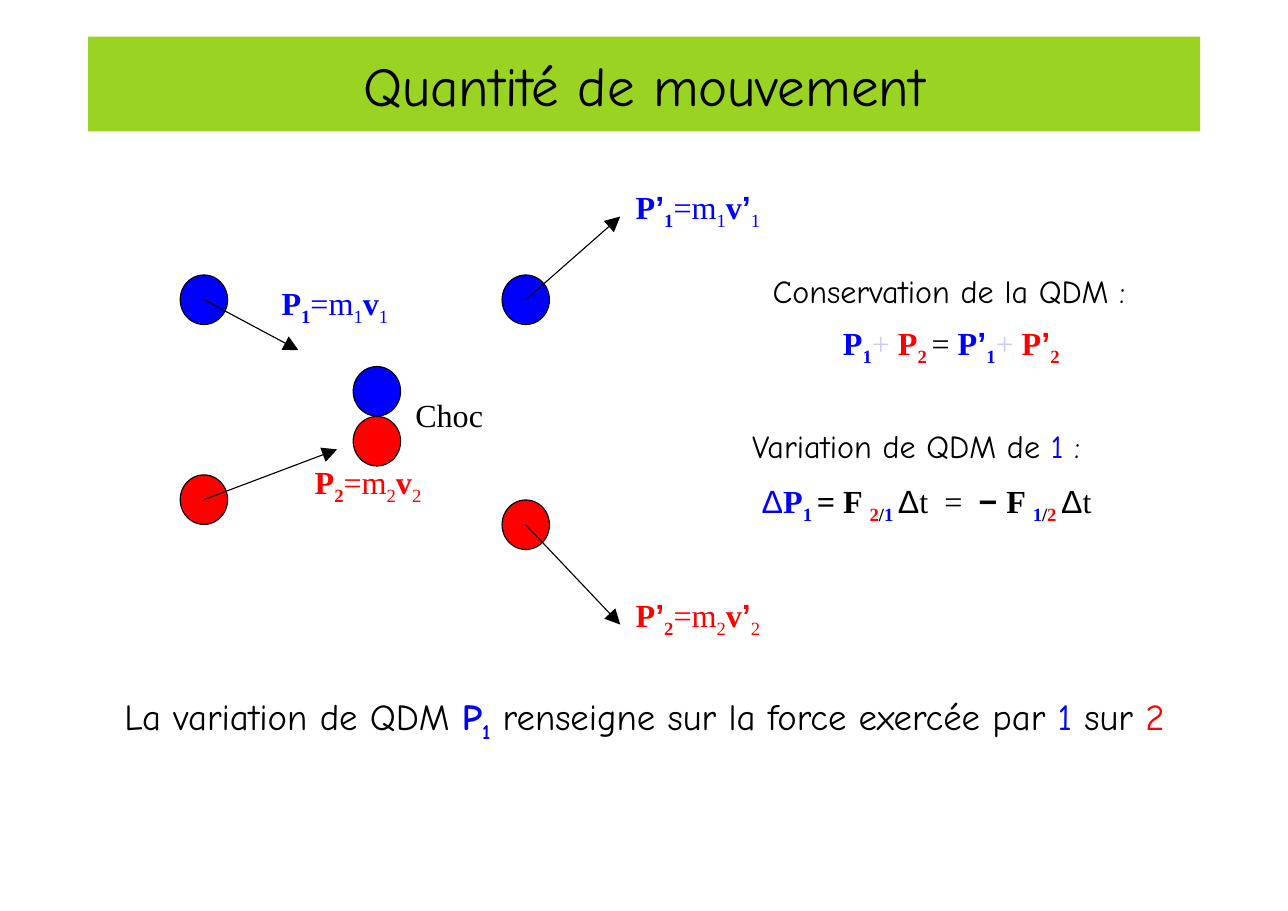
from lxml import etree
from pptx import Presentation
from pptx.dml.color import RGBColor
from pptx.enum.shapes import MSO_CONNECTOR, MSO_SHAPE
from pptx.enum.text import MSO_ANCHOR, MSO_AUTO_SIZE, PP_ALIGN
from pptx.oxml.ns import qn
from pptx.util import Inches, Pt

OVAL = MSO_SHAPE.OVAL
STRAIGHT = MSO_CONNECTOR.STRAIGHT
LEFT, CENTER = PP_ALIGN.LEFT, PP_ALIGN.CENTER
MIDDLE = MSO_ANCHOR.MIDDLE
NO_FIT, GROW = MSO_AUTO_SIZE.NONE, MSO_AUTO_SIZE.SHAPE_TO_FIT_TEXT

BLACK = RGBColor(0x00, 0x00, 0x00)
BLUE = RGBColor(0x00, 0x00, 0xFF)
RED = RGBColor(0xFF, 0x00, 0x00)
PALE = RGBColor(0xCC, 0xCC, 0xFF)
GREEN = RGBColor(0x9A, 0xD3, 0x22)

COMIC, TIMES, ARIAL = "Comic Neue", "Times New Roman", "Arial"

presentation = Presentation()
presentation.slide_width = Inches(11.69)
presentation.slide_height = Inches(8.27)
slide = presentation.slides.add_slide(presentation.slide_layouts[6])

# All places are given in percent of the slide's width and height.
COLUMN = presentation.slide_width / 100
ROW = presentation.slide_height / 100


def scale(*shares):
    """Turn alternating horizontal and vertical percentages into lengths."""
    return [int(share * (ROW if index % 2 else COLUMN))
            for index, share in enumerate(shares)]


def add_text(place, runs, font_name=TIMES, size=21, inset=6, align=LEFT):
    """Add a text box; a run is (text, colour, marks) with marks b, s (subscript), a (Arial)."""
    box = slide.shapes.add_textbox(*scale(*place))
    frame = box.text_frame
    settings = {
        "word_wrap": False, "auto_size": GROW,
        "margin_left": Pt(inset), "margin_right": Pt(inset),
        "margin_top": Pt(inset / 2), "margin_bottom": Pt(inset / 2),
    }
    for name, value in settings.items():
        setattr(frame, name, value)
    paragraph = frame.paragraphs[0]
    paragraph.alignment = align
    for text, colour, marks in runs:
        run = paragraph.add_run()
        run.text = text
        run.font.name = ARIAL if "a" in marks else font_name
        run.font.size = Pt(size)
        run.font.bold = "b" in marks
        run.font.color.rgb = colour
        if "s" in marks:
            run.font._element.set("baseline", "-25000")
    return box


# Title band
title = add_text((6.84, 4.03, 86.35, 10.4), [("Quantité de mouvement", BLACK, "")],
                 COMIC, 36, inset=0, align=CENTER)
title.fill.solid()
title.fill.fore_color.rgb = GREEN
title.text_frame.word_wrap = True
title.text_frame.auto_size = NO_FIT
title.text_frame.vertical_anchor = MIDDLE

# Balls before, during and after the collision: centre, colour, arrow tip
BALL_WIDTH, BALL_HEIGHT = 3.68, 5.44
balls = [
    (15.83, 32.9, BLUE, (23.18, 38.45)),
    (15.83, 54.85, RED, (26.18, 49.33)),
    (29.26, 42.95, BLUE, None),
    (29.26, 48.43, RED, None),
    (40.82, 32.9, BLUE, (48.16, 23.77)),
    (40.82, 57.6, RED, (48.16, 68.56)),
]
for x, y, colour, tip in balls:
    ball = slide.shapes.add_shape(OVAL, *scale(
        x - BALL_WIDTH / 2, y - BALL_HEIGHT / 2, BALL_WIDTH, BALL_HEIGHT))
    ball.shadow.inherit = False
    ball.fill.solid()
    ball.fill.fore_color.rgb = colour
    ball.line.color.rgb = BLACK
    ball.line.width = Pt(0.75)
    if tip:
        arrow = slide.shapes.add_connector(STRAIGHT, *scale(x, y, *tip))
        arrow.line.color.rgb = BLACK
        arrow.line.width = Pt(0.75)
        etree.SubElement(arrow.line._get_or_add_ln(), qn("a:tailEnd"),
                         type="triangle", w="lg", len="lg")
        etree.SubElement(arrow._element.spPr, qn("a:effectLst"))

# Momentum labels: place, ball number, colour, prime after the collision
labels = [
    ((21.15, 30.65, 9.92, 5.2), "1", BLUE, ""),
    ((23.72, 50.3, 9.92, 5.2), "2", RED, ""),
    ((48.76, 20.15, 11.46, 5.08), "1", BLUE, "’"),
    ((48.76, 64.93, 11.46, 5.08), "2", RED, "’"),
]
for place, number, colour, prime in labels:
    pieces = [("P", "b"), (prime, "ab"), (number, "bs"), ("=m", ""), (number, "s"),
              ("v", "b"), (prime, "ab"), (number, "s")]
    add_text(place, [(text, colour, marks) for text, marks in pieces if text],
             inset=5 if prime else 6)
add_text((31.65, 42.93, 6.8, 5.08), [("Choc", BLACK, "")], inset=5)

# Conservation law
add_text((59.15, 29.14, 30.62, 5.68), [("Conservation de la QDM :", BLACK, "")],
         COMIC, inset=7.2)
add_text((64.67, 35, 19.59, 5.32), [
    ("P", BLUE, "b"), ("1", BLUE, "bs"), ("+ ", PALE, ""),
    ("P", RED, "b"), ("2 ", RED, "bs"), ("= ", BLACK, ""),
    ("P", BLUE, "b"), ("’", BLUE, "ab"), ("1", BLUE, "bs"), ("+ ", PALE, ""),
    ("P", RED, "b"), ("’", RED, "ab"), ("2", RED, "bs"),
], inset=6.5)

# Variation of the first momentum
add_text((57.68, 46.31, 29.34, 5.44),
         [("Variation de QDM de ", BLACK, ""), ("1", BLUE, ""), (" :", BLACK, "")], COMIC)
add_text((58.43, 52.36, 27.37, 5.2), [
    ("Δ", BLUE, "a"), ("P", BLUE, "b"), ("1 ", BLUE, "bs"), ("= F ", BLACK, "b"),
    ("2", RED, "bs"), ("/", BLACK, "bs"), ("1 ", BLUE, "bs"),
    ("Δ", BLACK, "a"), ("t  =  ", BLACK, ""), ("− ", BLACK, "ab"), ("F ", BLACK, "b"),
    ("1", BLUE, "bs"), ("/", BLACK, "bs"), ("2 ", RED, "bs"),
    ("Δ", BLACK, "a"), ("t", BLACK, ""),
])

# Conclusion
add_text((5.9, 75.57, 88.28, 6.05), [
    ("La variation de QDM ", BLACK, ""), ("P", BLUE, "b"), ("1", BLUE, "bs"),
    (" renseigne sur la force exercée par ", BLACK, ""), ("1", BLUE, ""),
    (" sur ", BLACK, ""), ("2", RED, ""),
], COMIC, 24, inset=7.2, align=CENTER)

presentation.save("out.pptx")
